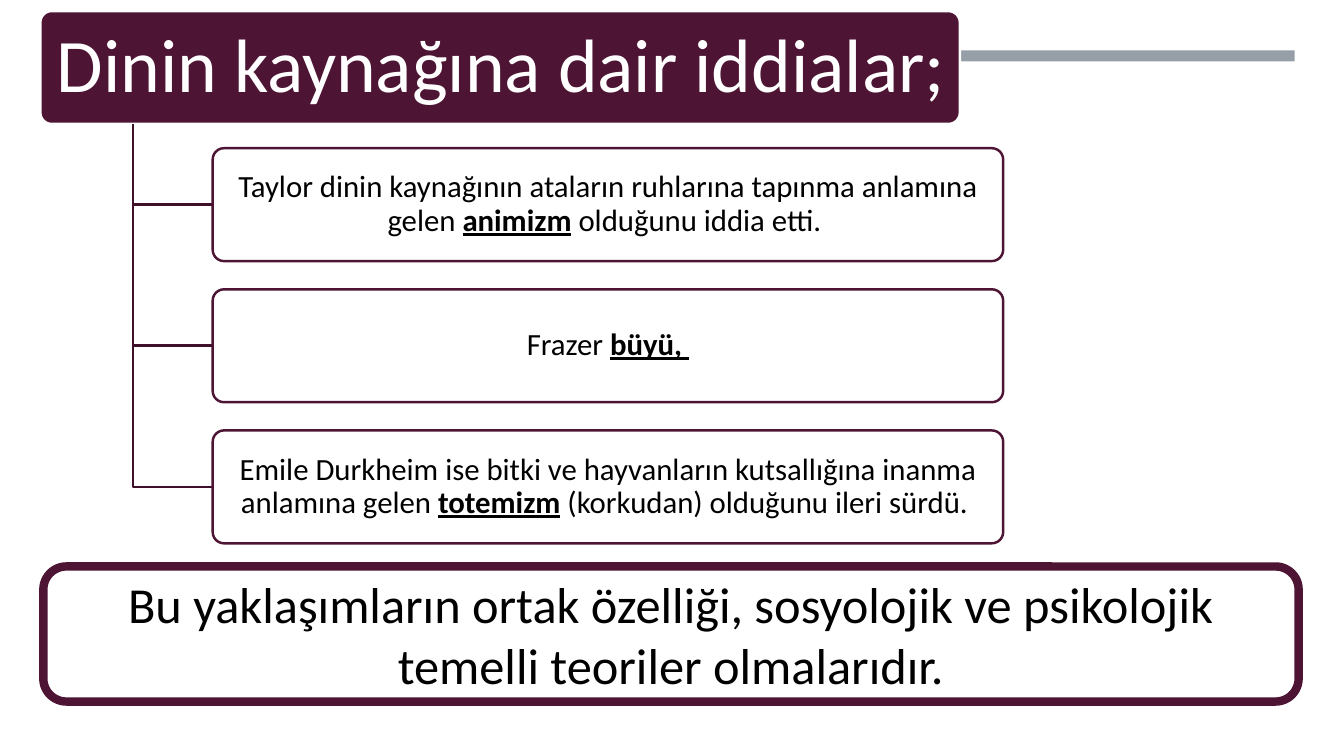
"""Build a slide on claims about the source of religion."""
from dataclasses import dataclass

from lxml import etree
from pptx import Presentation
from pptx.dml.color import RGBColor
from pptx.enum.shapes import MSO_SHAPE
from pptx.enum.text import MSO_ANCHOR, MSO_AUTO_SIZE, PP_ALIGN
from pptx.oxml.ns import qn
from pptx.shapes.autoshape import Shape
from pptx.slide import Slide
from pptx.util import Inches, Pt

RECT = MSO_SHAPE.RECTANGLE
ROUND = MSO_SHAPE.ROUNDED_RECTANGLE
MIDDLE = MSO_ANCHOR.MIDDLE
CENTER = PP_ALIGN.CENTER
NO_FIT = MSO_AUTO_SIZE.NONE

PLUM = RGBColor(0x4D, 0x14, 0x34)
DARK = RGBColor(0x3E, 0x10, 0x2A)
GRAY = RGBColor(0x96, 0x9F, 0xA7)
WHITE = RGBColor(0xFF, 0xFF, 0xFF)
BLACK = RGBColor(0x00, 0x00, 0x00)

FONT = "Calibri"
TRUNK, HEAD_END = 1.32, 1.23
LEFT, TOP, WIDTH, HEIGHT, STEP = 2.11, 1.47, 7.84, 1.12, 1.4


@dataclass(frozen=True)
class Run:
    """A piece of text, strong when bold and underlined."""
    text: str
    strong: bool = False


@dataclass(frozen=True)
class Box:
    """A filled shape with an optional outline."""
    left: float
    top: float
    width: float
    height: float
    fill: RGBColor
    line: RGBColor | None = None
    weight: float = 1.75
    round: float | None = None


CLAIMS = (
    (Run("Taylor dinin kaynağının ataların ruhlarına tapınma anlamına gelen "),
     Run("animizm", True), Run(" olduğunu iddia etti. ")),
    (Run("Frazer "), Run("büyü, ", True)),
    (Run("Emile Durkheim ise bitki ve hayvanların kutsallığına inanma anlamına gelen "),
     Run("totemizm", True), Run(" (korkudan) olduğunu ileri sürdü. ")),
)
CLOSING = (Run("Bu yaklaşımların ortak özelliği, sosyolojik ve psikolojik "
               "temelli teoriler olmalarıdır."),)
TITLE = (Run("Dinin kaynağına dair iddialar;"),)


def add_box(slide: Slide, box: Box) -> Shape:
    """Draw a box on the slide."""
    shape = slide.shapes.add_shape(
        RECT if box.round is None else ROUND, Inches(box.left),
        Inches(box.top), Inches(box.width), Inches(box.height))
    shape.shadow.inherit = False
    shape.fill.solid()
    shape.fill.fore_color.rgb = box.fill
    if box.round is not None:
        shape.adjustments[0] = box.round
    if box.line is None:
        shape.line.fill.background()
    else:
        shape.line.color.rgb = box.line
        shape.line.width = Pt(box.weight)
    return shape


def write(shape: Shape, runs: tuple[Run, ...], size: float, color: RGBColor,
          space: float = 0.9, side: float = 0.05, edge: float = 0.03) -> None:
    """Fill a shape with one centred paragraph."""
    frame = shape.text_frame
    frame.word_wrap = True
    frame.auto_size = NO_FIT
    frame.vertical_anchor = MIDDLE
    frame.margin_left = frame.margin_right = Inches(side)
    frame.margin_top = frame.margin_bottom = Inches(edge)
    para = frame.paragraphs[0]
    para.alignment = CENTER
    para.line_spacing = space
    for item in runs:
        run = para.add_run()
        run.text = item.text
        font = run.font
        font.name, font.size = FONT, Pt(size)
        font.color.rgb = color
        font.bold = font.underline = item.strong


def add_branch(slide: Slide, level: float) -> None:
    """Draw an elbow from the heading to a claim."""
    path = slide.shapes.build_freeform(Inches(TRUNK), Inches(HEAD_END))
    path.add_line_segments(
        [(Inches(TRUNK), Inches(level)), (Inches(LEFT), Inches(level))], close=False)
    elbow = path.convert_to_shape()
    elbow.shadow.inherit = False
    elbow.fill.background()
    elbow.line.color.rgb = DARK
    elbow.line.width = Pt(1.75)


def add_claim(slide: Slide, top: float, runs: tuple[Run, ...]) -> None:
    """Draw a claim and its branch."""
    add_branch(slide, top + HEIGHT / 2)
    shape = add_box(slide, Box(LEFT, top, WIDTH, HEIGHT, WHITE, PLUM, round=0.1))
    tint = shape.element.spPr.find(f"{qn('a:solidFill')}/{qn('a:srgbClr')}")
    etree.SubElement(tint, qn("a:alpha"), val="90000")
    write(shape, runs, 22, BLACK)


def add_title(slide: Slide) -> None:
    """Draw the heading bar and set the title on it."""
    add_box(slide, Box(0.4, 0.11, 9.12, HEIGHT, PLUM, WHITE, round=0.1))
    title = slide.shapes.title
    title.left, title.top = Inches(0.44), Inches(0.15)
    title.width, title.height = Inches(9.06), Inches(1.05)
    write(title, TITLE, 54, WHITE, edge=0.07)
    slide.shapes.element.append(title.element)


def main() -> None:
    """Build and save the deck."""
    deck = Presentation()
    deck.slide_width, deck.slide_height = Inches(13.33), Inches(7.5)
    slide = deck.slides.add_slide(deck.slide_layouts[5])
    add_box(slide, Box(8.79, 0.5, 4.05, 0.11, GRAY))
    end = add_box(slide, Box(0.43, 5.62, 12.45, 1.34, WHITE, PLUM, 6, 0.17))
    write(end, CLOSING, 36, BLACK, 1.0, 0.1, 0.05)
    add_title(slide)
    for row, runs in enumerate(CLAIMS):
        add_claim(slide, TOP + row * STEP, runs)
    deck.save("out.pptx")


if __name__ == "__main__":
    main()
